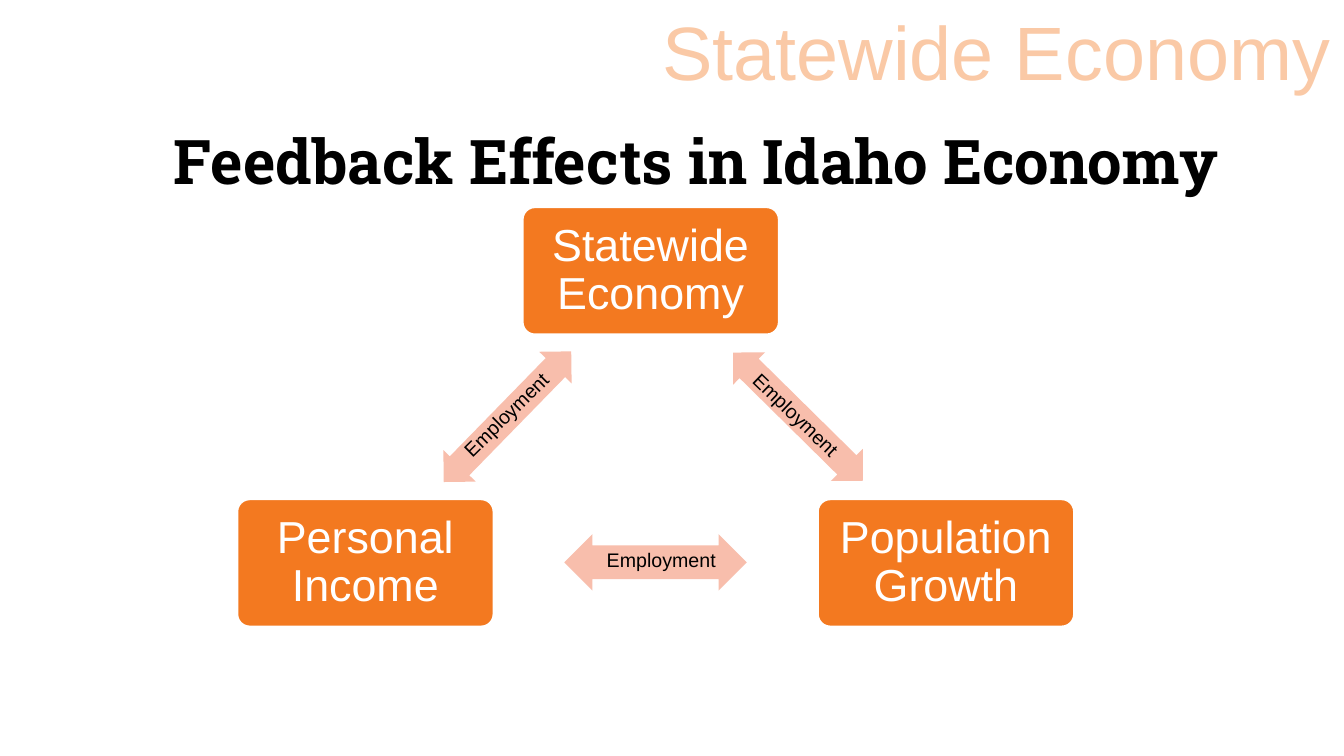
import pptx
import pptx.dml.color
import pptx.enum.shapes
import pptx.enum.text
import pptx.util
from dataclasses import dataclass

Cm, Pt = pptx.util.Cm, pptx.util.Pt
SHAPE = pptx.enum.shapes.MSO_SHAPE
ALIGN = pptx.enum.text.PP_ALIGN
ANCHOR = pptx.enum.text.MSO_ANCHOR
AUTO = pptx.enum.text.MSO_AUTO_SIZE


@dataclass(frozen=True)
class Theme:
    white: str = "FFFFFF"
    black: str = "000000"
    orange: str = "F37920"
    peach: str = "FAC9A6"
    salmon: str = "F8BEAC"
    title_font: str = "Roboto Slab"
    body_font: str = "Arial"
    title_size: int = 44
    header_size: int = 54
    node_size: int = 32
    label_size: int = 14


class SlideBuilder:
    def __init__(self, prs, theme):
        self.theme = theme
        self.s = prs.slides.add_slide(prs.slide_layouts[5])
        self.s.background.fill.solid()
        self.s.background.fill.fore_color.rgb = self.rgb(theme.white)

    @staticmethod
    def rgb(color):
        return pptx.dml.color.RGBColor.from_string(color)

    def add_text(self, tf, text, size, color, font=None, bold=False,
                 align=ALIGN.CENTER, spacing=None):
        p = tf.paragraphs[0]
        p.alignment = align
        p.line_spacing = spacing
        r = p.add_run()
        r.text = text
        r.font.name = font or self.theme.body_font
        r.font.size = Pt(size)
        r.font.bold = bold
        r.font.color.rgb = self.rgb(color)

    def title(self, text, x, y, w, h):
        sp = self.s.shapes.title
        sp.left, sp.top, sp.width, sp.height = Cm(x), Cm(y), Cm(w), Cm(h)
        tf = sp.text_frame
        tf.auto_size = AUTO.NONE
        tf.vertical_anchor = ANCHOR.MIDDLE
        self.add_text(tf, text, self.theme.title_size, self.theme.black,
                      self.theme.title_font, bold=True, spacing=0.9)

    def textbox(self, x, y, w, h, wrap):
        sp = self.s.shapes.add_textbox(Cm(x), Cm(y), Cm(w), Cm(h))
        sp.text_frame.word_wrap = wrap
        sp.text_frame.auto_size = AUTO.SHAPE_TO_FIT_TEXT
        return sp

    def header(self, text, x, y, w, h):
        sp = self.textbox(x, y, w, h, wrap=False)
        self.add_text(sp.text_frame, text, self.theme.header_size, self.theme.peach)

    def label(self, text, x, y, angle):
        sp = self.textbox(x, y, 3.78, 0.86, wrap=True)
        sp.rotation = angle
        self.add_text(sp.text_frame, text, self.theme.label_size,
                      self.theme.black, align=ALIGN.LEFT)

    def shape(self, kind, x, y, w, h, color, adjustments):
        sp = self.s.shapes.add_shape(kind, Cm(x), Cm(y), Cm(w), Cm(h))
        sp.shadow.inherit = False
        sp.fill.solid()
        sp.fill.fore_color.rgb = self.rgb(color)
        for i, value in enumerate(adjustments):
            sp.adjustments[i] = value
        return sp

    def node(self, text, x, y):
        sp = self.shape(SHAPE.ROUNDED_RECTANGLE, x, y, 6.48, 3.23,
                        self.theme.orange, [0.1])
        sp.line.color.rgb = self.rgb(self.theme.white)
        sp.line.width = Pt(2)
        tf = sp.text_frame
        tf.word_wrap = True
        tf.vertical_anchor = ANCHOR.MIDDLE
        tf.margin_left = tf.margin_right = Cm(0.33)
        tf.margin_top = tf.margin_bottom = Cm(0.33)
        self.add_text(tf, text, self.theme.node_size, self.theme.white, spacing=0.9)

    def arrow(self, x, y, h, angle):
        sp = self.shape(SHAPE.LEFT_RIGHT_ARROW, x, y, 4.6, h,
                        self.theme.salmon, [0.6, 0.5])
        sp.line.fill.background()
        sp.rotation = angle


def main():
    prs = pptx.Presentation()
    prs.slide_width, prs.slide_height = Cm(33.87), Cm(19.05)
    slide = SlideBuilder(prs, Theme())

    # Title and section header
    slide.title("Feedback Effects in Idaho Economy", 2.69, 3, 29.74, 2.29)
    slide.header("Statewide Economy", 16.36, 0, 17.5, 2.57)

    # Corners of the feedback triangle
    for text, x, y in [("Statewide Economy", 13.16, 5.21),
                       ("Population Growth", 20.6, 12.57),
                       ("Personal Income", 5.97, 12.57)]:
        slide.node(text, x, y)

    # Two-way arrows along the sides: left, top, height, angle
    for side in [(17.81, 9.93, 1.14, 44.6),
                 (14.22, 13.46, 1.42, 180),
                 (10.49, 9.93, 1.14, 314.3)]:
        slide.arrow(*side)

    # Arrow labels: left, top, angle
    for place in [(11.05, 9.83, 315.3), (18.36, 10.21, 43.8), (15.04, 13.69, 0)]:
        slide.label("Employment", *place)

    prs.save("out.pptx")


if __name__ == "__main__":
    main()
